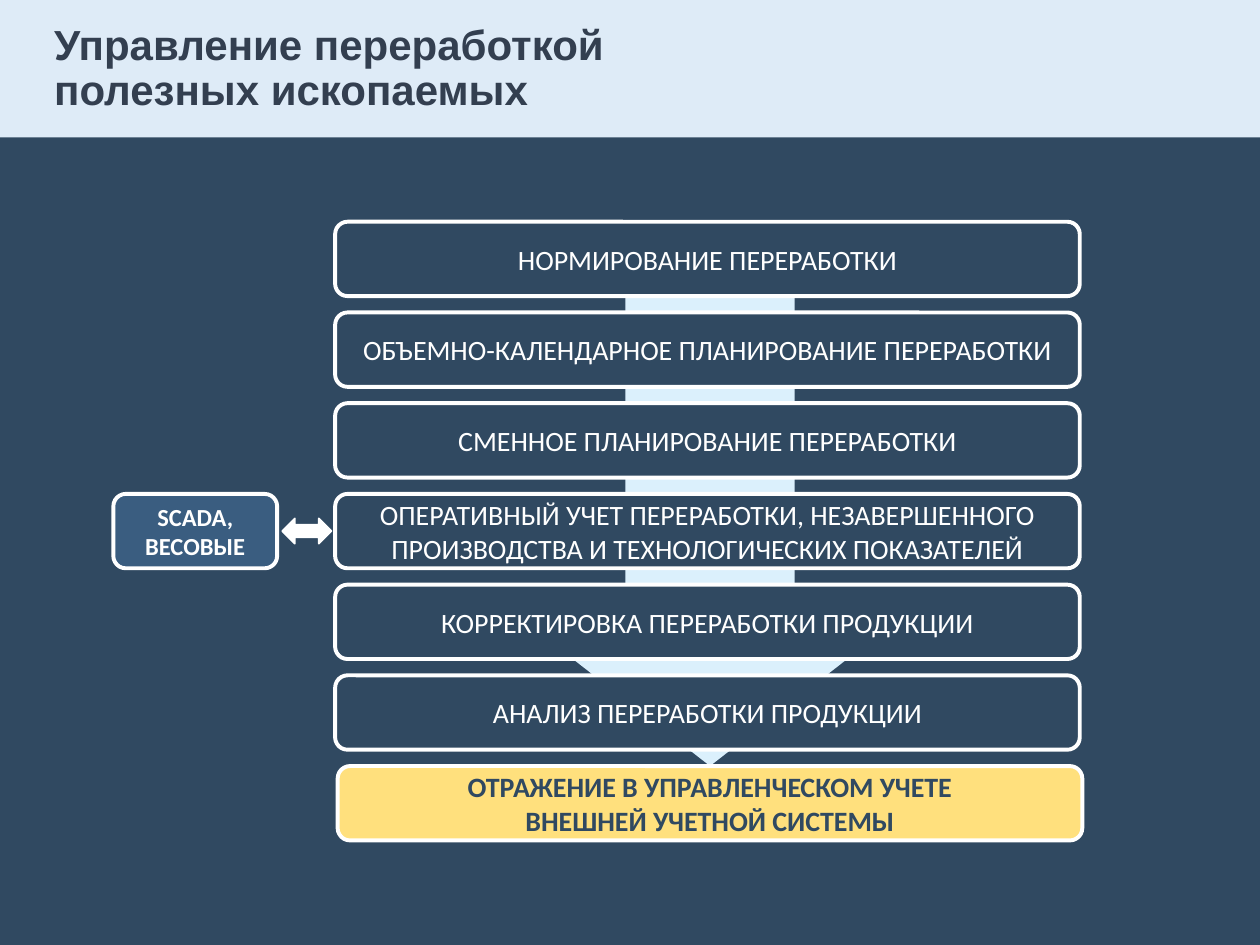
from dataclasses import dataclass

from pptx import Presentation
from pptx.dml.color import RGBColor
from pptx.enum.shapes import MSO_SHAPE
from pptx.enum.text import MSO_ANCHOR, PP_ALIGN
from pptx.shapes.autoshape import Shape
from pptx.slide import Slide
from pptx.util import Inches, Pt


@dataclass(frozen=True)
class Theme:
    background: str = "304961"
    band: str = "DEEBF7"
    title: str = "333F50"
    flow: str = "DBF0FC"
    white: str = "FFFFFF"
    result: str = "FFE07D"
    source: str = "3A5D80"
    title_font: str = "Arial"
    body_font: str = "Calibri"
    title_size: int = 24
    stage_size: int = 16
    source_size: int = 14
    border: float = 2.25
    thin_border: float = 1


@dataclass(frozen=True)
class Grid:
    left: float = 2.66
    top: float = 1.76
    width: float = 5.91
    row_height: float = 0.59
    row_step: float = 0.72

    def row_top(self, row: int) -> float:
        return self.top + row * self.row_step


@dataclass(frozen=True)
class Area:
    left: float
    top: float
    width: float
    height: float

    def lengths(self) -> tuple[int, ...]:
        return tuple(Inches(side) for side in (self.left, self.top, self.width, self.height))


@dataclass(frozen=True)
class Stage:
    text: str
    area: Area
    fill: str
    color: str
    size: int
    bold: bool = False


THEME = Theme()
GRID = Grid()
SLIDE_WIDTH, SLIDE_HEIGHT = 10, 7.5

STEPS = (
    "НОРМИРОВАНИЕ ПЕРЕРАБОТКИ",
    "ОБЪЕМНО-КАЛЕНДАРНОЕ ПЛАНИРОВАНИЕ ПЕРЕРАБОТКИ",
    "СМЕННОЕ ПЛАНИРОВАНИЕ ПЕРЕРАБОТКИ",
    "ОПЕРАТИВНЫЙ УЧЕТ ПЕРЕРАБОТКИ, НЕЗАВЕРШЕННОГО ПРОИЗВОДСТВА И ТЕХНОЛОГИЧЕСКИХ ПОКАЗАТЕЛЕЙ",
    "КОРРЕКТИРОВКА ПЕРЕРАБОТКИ ПРОДУКЦИИ",
    "АНАЛИЗ ПЕРЕРАБОТКИ ПРОДУКЦИИ",
)
RESULT_ROW = len(STEPS)
ACCOUNTING_ROW = 3


def row_area(row: int, left: float = GRID.left, width: float = GRID.width) -> Area:
    return Area(left, GRID.row_top(row), width, GRID.row_height)


def rgb(color: str) -> RGBColor:
    return RGBColor.from_string(color)


def add_figure(slide: Slide, kind: MSO_SHAPE, area: Area, fill: str, border: float = 0) -> Shape:
    figure = slide.shapes.add_shape(kind, *area.lengths())
    figure.shadow.inherit = False
    figure.fill.solid()
    figure.fill.fore_color.rgb = rgb(fill)
    if border:
        figure.line.color.rgb = rgb(THEME.white)
        figure.line.width = Pt(border)
    else:
        figure.line.fill.background()
    return figure


def add_stage(slide: Slide, stage: Stage) -> None:
    box = add_figure(slide, MSO_SHAPE.ROUNDED_RECTANGLE, stage.area, stage.fill, THEME.border)
    frame = box.text_frame
    frame.word_wrap = True
    frame.vertical_anchor = MSO_ANCHOR.MIDDLE
    frame.text = stage.text
    paragraph = frame.paragraphs[0]
    paragraph.alignment = PP_ALIGN.CENTER
    paragraph.font.name = THEME.body_font
    paragraph.font.size = Pt(stage.size)
    paragraph.font.bold = stage.bold
    paragraph.font.color.rgb = rgb(stage.color)


def add_heading(slide: Slide, text: str) -> None:
    title = slide.shapes.title
    band = add_figure(slide, MSO_SHAPE.RECTANGLE, Area(0, 0, SLIDE_WIDTH, 1.09), THEME.band)
    title.element.addprevious(band.element)
    title.left, title.top, title.width, title.height = Area(0.33, 0.16, 6.06, 0.78).lengths()
    title.text_frame.text = text
    title.text_frame.word_wrap = True
    title.text_frame.vertical_anchor = MSO_ANCHOR.MIDDLE
    paragraph = title.text_frame.paragraphs[0]
    paragraph.alignment = PP_ALIGN.LEFT
    paragraph.line_spacing = 0.9
    paragraph.font.name = THEME.title_font
    paragraph.font.size = Pt(THEME.title_size)
    paragraph.font.bold = True
    paragraph.font.color.rgb = rgb(THEME.title)


def add_flow(slide: Slide) -> None:
    flow_top = GRID.row_top(0) + GRID.row_height
    flow_area = Area(4.29, flow_top, 2.69, GRID.row_top(RESULT_ROW) - flow_top)
    flow = add_figure(slide, MSO_SHAPE.DOWN_ARROW, flow_area, THEME.flow)
    flow.adjustments[0] = 0.5 * 1.25
    flow.adjustments[1] = 0.39
    flow.adjustments[0] = 0.5


def main() -> None:
    presentation = Presentation()
    presentation.slide_width = Inches(SLIDE_WIDTH)
    presentation.slide_height = Inches(SLIDE_HEIGHT)
    slide = presentation.slides.add_slide(presentation.slide_layouts.get_by_name("Title Only"))
    slide.background.fill.solid()
    slide.background.fill.fore_color.rgb = rgb(THEME.background)

    add_heading(slide, "Управление переработкой полезных ископаемых")
    add_flow(slide)
    for row, step in enumerate(STEPS):
        add_stage(slide, Stage(step, row_area(row), THEME.background, THEME.white, THEME.stage_size))
    add_stage(slide, Stage(
        "ОТРАЖЕНИЕ В УПРАВЛЕНЧЕСКОМ УЧЕТЕ\vВНЕШНЕЙ УЧЕТНОЙ СИСТЕМЫ",
        row_area(RESULT_ROW, left=GRID.left + 0.02),
        THEME.result, THEME.background, THEME.stage_size, bold=True,
    ))
    add_stage(slide, Stage(
        "SCADA, ВЕСОВЫЕ", row_area(ACCOUNTING_ROW, left=0.9, width=1.3),
        THEME.source, THEME.white, THEME.source_size, bold=True,
    ))
    exchange_height = 0.2
    exchange_top = GRID.row_top(ACCOUNTING_ROW) + (GRID.row_height - exchange_height) / 2
    add_figure(
        slide, MSO_SHAPE.LEFT_RIGHT_ARROW, Area(2.24, exchange_top, 0.39, exchange_height),
        THEME.white, THEME.thin_border,
    )
    presentation.save("out.pptx")


if __name__ == "__main__":
    main()
